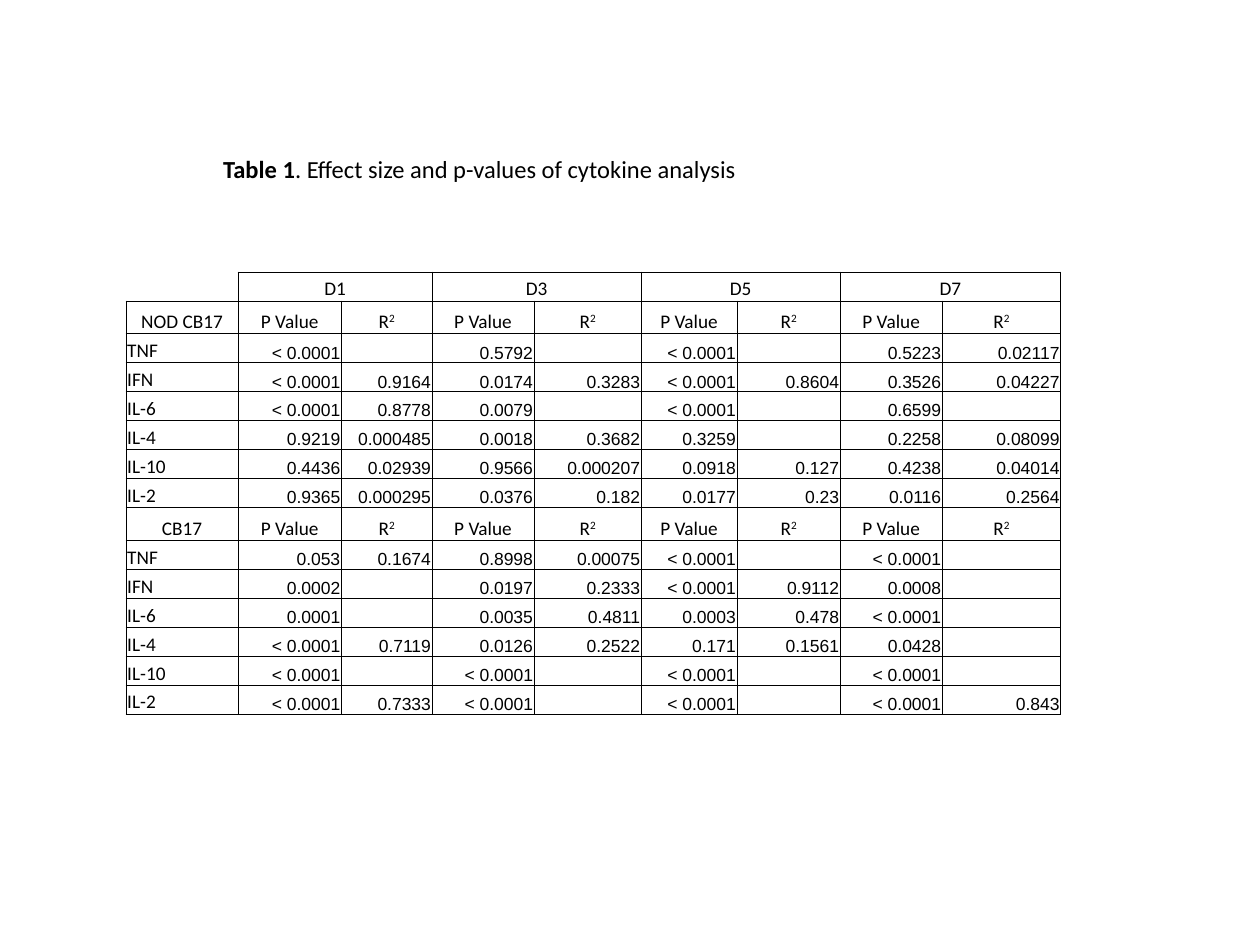
from lxml import etree
from pptx import Presentation
from pptx import util as u
from pptx.dml.color import RGBColor
from pptx.enum import text
from pptx.oxml import ns

BLACK = "000000"
COLUMN_WIDTHS = [0.89, 0.82, 0.72, 0.81, 0.85, 0.76, 0.82, 0.81, 0.94]
ROW_HEIGHT, SUBHEAD_HEIGHT = 0.23, 0.26
DAYS = ["D1", "D3", "D5", "D7"]
LOW = "< 0.0001"

# Each group: strain, then cytokine rows of P Value and R2 for each day
GROUPS = [
    ("NOD CB17", [
        ["TNF", LOW, "", "0.5792", "", LOW, "", "0.5223", "0.02117"],
        ["IFN", LOW, "0.9164", "0.0174", "0.3283", LOW, "0.8604", "0.3526", "0.04227"],
        ["IL-6", LOW, "0.8778", "0.0079", "", LOW, "", "0.6599", ""],
        ["IL-4", "0.9219", "0.000485", "0.0018", "0.3682", "0.3259", "", "0.2258", "0.08099"],
        ["IL-10", "0.4436", "0.02939", "0.9566", "0.000207", "0.0918", "0.127", "0.4238", "0.04014"],
        ["IL-2", "0.9365", "0.000295", "0.0376", "0.182", "0.0177", "0.23", "0.0116", "0.2564"],
    ]),
    ("CB17", [
        ["TNF", "0.053", "0.1674", "0.8998", "0.00075", LOW, "", LOW, ""],
        ["IFN", "0.0002", "", "0.0197", "0.2333", LOW, "0.9112", "0.0008", ""],
        ["IL-6", "0.0001", "", "0.0035", "0.4811", "0.0003", "0.478", LOW, ""],
        ["IL-4", LOW, "0.7119", "0.0126", "0.2522", "0.171", "0.1561", "0.0428", ""],
        ["IL-10", LOW, "", LOW, "", LOW, "", LOW, ""],
        ["IL-2", LOW, "0.7333", LOW, "", LOW, "", LOW, "0.843"],
    ]),
]


def color(hex_value):
    return RGBColor.from_string(hex_value)


def format_paragraph(paragraph, font_name, size, alignment):
    paragraph.alignment = alignment
    font = paragraph.font
    font.name, font.size = font_name, u.Pt(size)
    font.color.rgb = color(BLACK)


def add_caption(slide, left, top, width, height):
    title = slide.shapes.title
    title.left, title.top, title.width, title.height = map(u.Inches, (left, top, width, height))
    frame = title.text_frame
    frame.word_wrap = True
    frame.auto_size = text.MSO_AUTO_SIZE.NONE
    frame.vertical_anchor = text.MSO_ANCHOR.TOP
    paragraph = frame.paragraphs[0]
    format_paragraph(paragraph, "Calibri", 14, text.PP_ALIGN.JUSTIFY)
    label = paragraph.add_run()
    label.text = "Table 1"
    label.font.bold = True
    paragraph.add_run().text = ". Effect size and p-values of cytokine analysis"


def set_borders(cell, sides):
    properties = cell._tc.get_or_add_tcPr()
    for side in sides:
        line = etree.SubElement(properties, ns.qn(f"a:ln{side}"), w=str(u.Pt(0.5)))
        fill = etree.SubElement(line, ns.qn("a:solidFill"))
        etree.SubElement(fill, ns.qn("a:srgbClr"), val=BLACK)


def fill_cell(cell, value, font_name="Calibri", size=11, alignment=text.PP_ALIGN.CENTER):
    cell.vertical_anchor = text.MSO_ANCHOR.BOTTOM
    cell.margin_left = cell.margin_right = cell.margin_top = u.Inches(0.01)
    cell.margin_bottom = 0
    paragraph = cell.text_frame.paragraphs[0]
    format_paragraph(paragraph, font_name, size, alignment)
    if value:
        paragraph.add_run().text = value
    return paragraph


def fill_subhead(table, row, strain):
    table.rows[row].height = u.Inches(SUBHEAD_HEIGHT)
    fill_cell(table.cell(row, 0), strain)
    for column in range(1, len(COLUMN_WIDTHS), 2):
        fill_cell(table.cell(row, column), "P Value")
        paragraph = fill_cell(table.cell(row, column + 1), "R")
        exponent = paragraph.add_run()
        exponent.text = "2"
        exponent.font._element.set("baseline", "30000")


def add_results_table(slide, left, top, width, height):
    row_count = 1 + sum(1 + len(rows) for _, rows in GROUPS)
    frame = slide.shapes.add_table(row_count, len(COLUMN_WIDTHS),
                                   *map(u.Inches, (left, top, width, height)))
    table = frame.table
    table.first_row = table.horz_banding = False
    for column, column_width in zip(table.columns, COLUMN_WIDTHS):
        column.width = u.Inches(column_width)
    for row in table.rows:
        row.height = u.Inches(ROW_HEIGHT)

    # Grid, open at the top left corner
    for index, cell in enumerate(table.iter_cells()):
        set_borders(cell, "RB" if index == 0 else "LRTB")
        cell.fill.background()

    # Day headings over column pairs
    fill_cell(table.cell(0, 0), "")
    for index, day in enumerate(DAYS):
        first = table.cell(0, 1 + 2 * index)
        first.merge(table.cell(0, 2 + 2 * index))
        fill_cell(first, day)

    # Strain groups
    row = 1
    for strain, results in GROUPS:
        fill_subhead(table, row, strain)
        for row, (cytokine, *values) in enumerate(results, row + 1):
            fill_cell(table.cell(row, 0), cytokine, alignment=text.PP_ALIGN.LEFT)
            for column, value in enumerate(values, 1):
                fill_cell(table.cell(row, column), value, "Arial", 10, text.PP_ALIGN.RIGHT)
        row += 1


def main():
    presentation = Presentation()
    presentation.slide_width, presentation.slide_height = u.Inches(10), u.Inches(7.5)
    slide = presentation.slides.add_slide(presentation.slide_layouts[5])
    add_caption(slide, 1.67, 1.17, 5.67, 0.34)
    add_results_table(slide, 1, 2.16, sum(COLUMN_WIDTHS), 3.51)
    presentation.save("out.pptx")


if __name__ == "__main__":
    main()
